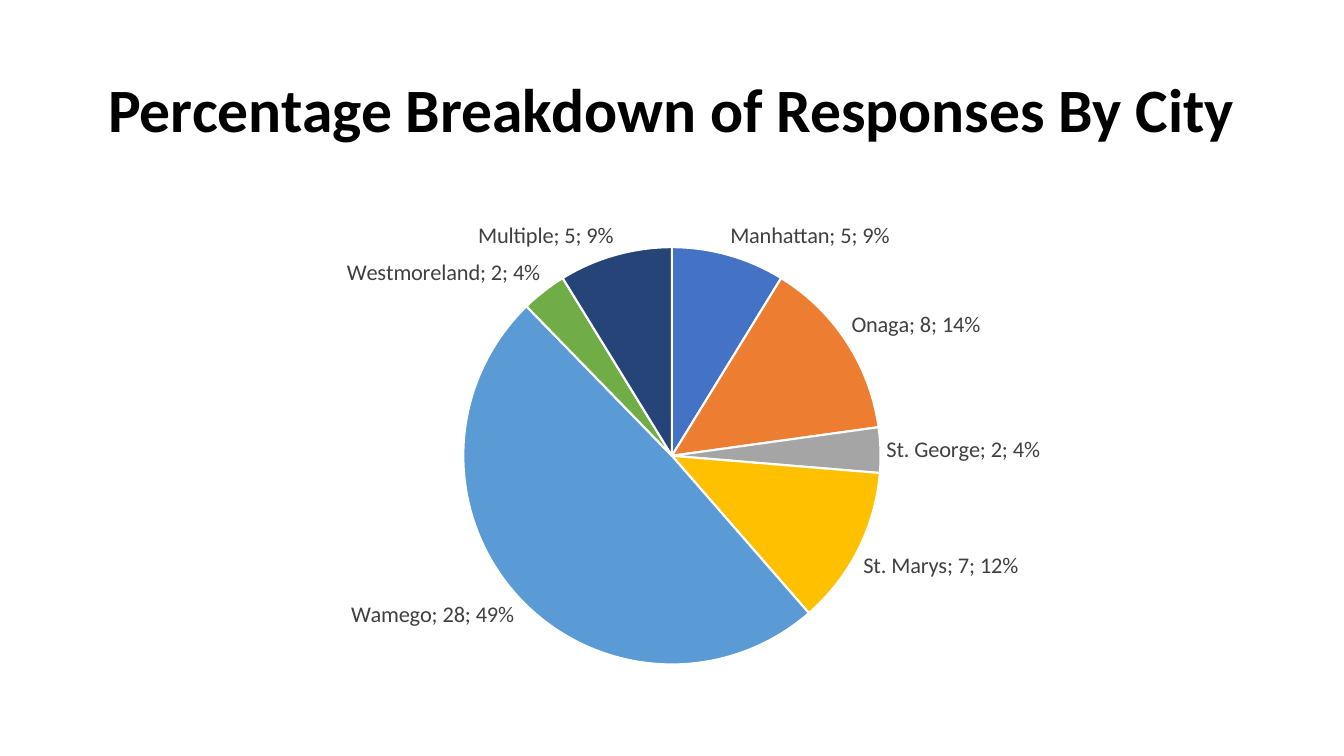
from lxml.etree import SubElement
from pptx import Presentation
from pptx.chart.data import CategoryChartData
from pptx.dml.color import RGBColor
from pptx.enum.chart import XL_CHART_TYPE as ChartType, XL_LABEL_POSITION as LabelPosition
from pptx.enum.text import MSO_ANCHOR as Anchor, PP_ALIGN as Align
from pptx.oxml.ns import qn
from pptx.util import Emu, Pt

PX = 9525  # EMU per pixel, 96 px to the inch
FONT = "Calibri"
RESPONSES = [
    ("Manhattan", 5, "4472C4"),
    ("Onaga", 8, "ED7D31"),
    ("St. George", 2, "A5A5A5"),
    ("St. Marys", 7, "FFC000"),
    ("Wamego", 28, "5B9BD5"),
    ("Westmoreland", 2, "70AD47"),
    ("Multiple", 5, "264478"),
]
PIE_LAYOUT = {"x": 0.32, "y": 0.09, "w": 0.36, "h": 0.88}


def px(*lengths):
    return [Emu(length * PX) for length in lengths]


def color(value):
    return RGBColor.from_string(value)


def style_font(font, size, value, bold=False):
    font.name = FONT
    font.size = Pt(size)
    font.bold = bold
    font.color.rgb = color(value)


def add_title(page, text, bounds):
    box = page.shapes.add_textbox(*px(*bounds))
    frame = box.text_frame
    frame.word_wrap = True
    frame.vertical_anchor = Anchor.MIDDLE
    para = frame.paragraphs[0]
    para.text = text
    para.alignment = Align.CENTER
    para.line_spacing = 0.9
    style_font(para.font, 44, "000000", bold=True)


def place_plot(chart, fractions):
    """Fix the inner plot area at fractions of the chart frame."""
    plot_area = chart.element.find(".//" + qn("c:plotArea"))
    for old_layout in plot_area.findall(qn("c:layout")):
        plot_area.remove(old_layout)
    layout = SubElement(plot_area, qn("c:layout"))
    plot_area.insert(0, layout)
    manual = SubElement(layout, qn("c:manualLayout"))
    settings = {"layoutTarget": "inner", "xMode": "edge", "yMode": "edge", **fractions}
    for name, value in settings.items():
        SubElement(manual, qn("c:" + name)).set("val", str(value))


def label_slices(series):
    labels = series.data_labels
    labels.show_category_name = True
    labels.show_value = True
    labels.show_percentage = True
    labels.show_legend_key = False
    labels.position = LabelPosition.OUTSIDE_END
    style_font(labels.font, 16, "404040")
    label_xml = series.data_labels._element
    separator = SubElement(label_xml, qn("c:separator"))
    separator.text = "; "
    label_xml.find(qn("c:showBubbleSize")).addnext(separator)


def add_pie(page, responses, bounds):
    data = CategoryChartData()
    data.categories = [city for city, _, _ in responses]
    data.add_series("Series 1", [count for _, count, _ in responses])
    chart = page.shapes.add_chart(ChartType.PIE, *px(*bounds), data).chart
    chart.has_title = False
    chart.has_legend = False
    style_font(chart.font, 10, "000000")
    plot = chart.plots[0]
    plot.vary_by_categories = True
    series = plot.series[0]
    for index, (_, _, fill) in enumerate(responses):
        slice_format = series.points[index].format
        slice_format.fill.solid()
        slice_format.fill.fore_color.rgb = color(fill)
        slice_format.line.color.rgb = color("FFFFFF")
        slice_format.line.width = Pt(1.5)
    label_slices(series)
    place_plot(chart, PIE_LAYOUT)


def main():
    deck = Presentation()
    deck.slide_width, deck.slide_height = px(1280, 720)
    page = deck.slides.add_slide(deck.slide_layouts[6])
    add_title(page, "Percentage Breakdown of Responses By City", (88, 38, 1104, 139))
    add_pie(page, RESPONSES, (88, 192, 1104, 457))
    deck.save("out.pptx")


if __name__ == "__main__":
    main()
